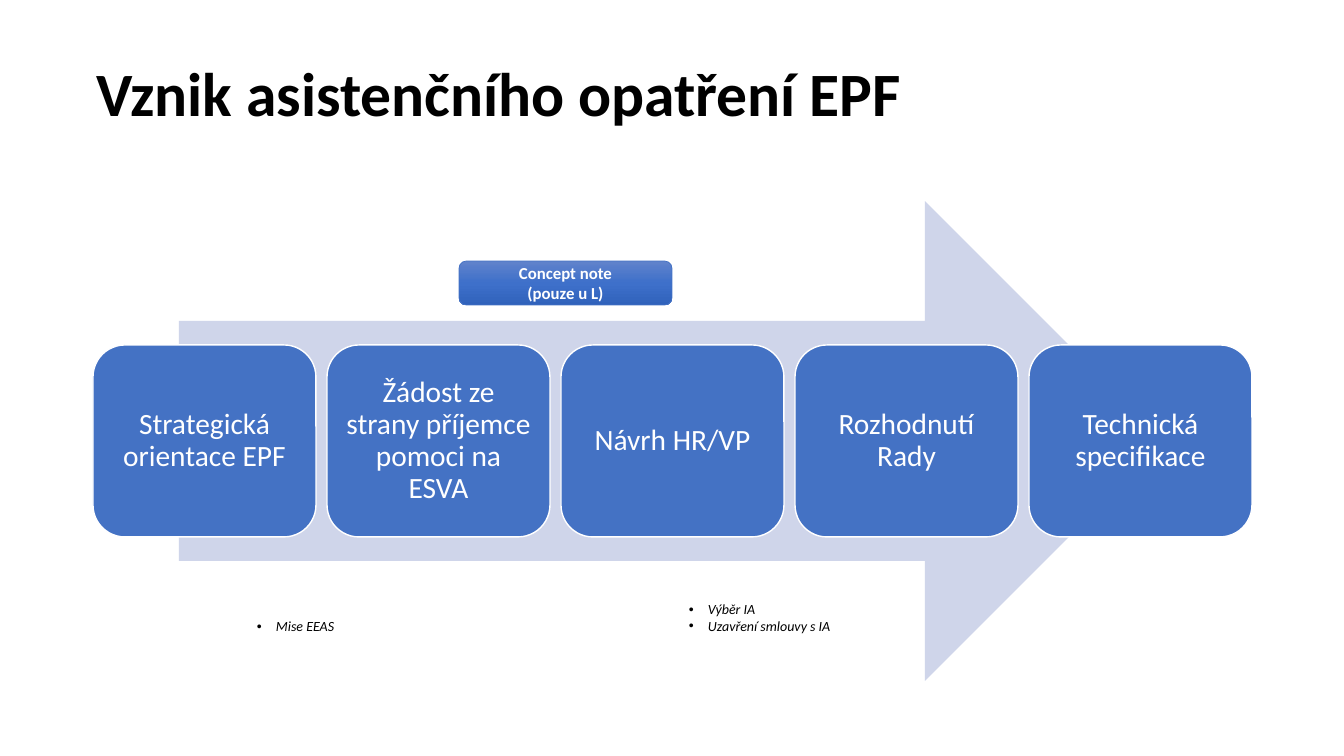
import copy
from dataclasses import dataclass

import pptx
import pptx.dml.color
import pptx.enum.shapes
import pptx.enum.text
import pptx.oxml.ns
import pptx.oxml.xmlchemy
import pptx.util
from lxml import etree

RGBColor = pptx.dml.color.RGBColor
Shape = pptx.enum.shapes.MSO_SHAPE
Align = pptx.enum.text.PP_ALIGN
Anchor = pptx.enum.text.MSO_ANCHOR
AutoSize = pptx.enum.text.MSO_AUTO_SIZE
qn = pptx.oxml.ns.qn

WHITE = RGBColor(0xFF, 0xFF, 0xFF)
BLACK = RGBColor(0x00, 0x00, 0x00)
BLUE = RGBColor(0x44, 0x72, 0xC4)
PALE_BLUE = RGBColor(0xCF, 0xD5, 0xEA)
CONCEPT_GRADIENT = (
    (0.0, RGBColor(0x61, 0x83, 0xCB)),
    (0.5, RGBColor(0x3E, 0x70, 0xCA)),
    (1.0, RGBColor(0x30, 0x62, 0xBB)),
)

FONT = "Calibri"
EMU_PER_PX = 914400 / 100.8
STEP_LEFT, STEP_TOP, STEP_PITCH = 93, 345, 234
STEP_WIDTH, STEP_HEIGHT, STEP_INSET = 223, 192, 9
BULLET_INDENT = 19


@dataclass(frozen=True)
class Area:
    left: int
    top: int
    width: int
    height: int

    def emu(self) -> tuple:
        return px(self.left), px(self.top), px(self.width), px(self.height)


@dataclass(frozen=True)
class Note:
    area: Area
    items: tuple


STEPS = (
    "Strategická orientace EPF",
    "Žádost ze strany příjemce pomoci na ESVA",
    "Návrh HR/VP",
    "Rozhodnutí Rady",
    "Technická specifikace",
)
NOTES = (
    Note(Area(679, 596, 213, 44), ("Výběr IA", "Uzavření smlouvy s IA")),
    Note(Area(247, 613, 213, 27), ("Mise EEAS",)),
)


def px(length: int) -> pptx.util.Emu:
    return pptx.util.Emu(round(length * EMU_PER_PX))


def format_text(frame, size: int, color: RGBColor, align=Align.LEFT,
                bold: bool = False, italic: bool = False) -> None:
    for para in frame.paragraphs:
        para.alignment = align
        for span in para.runs:
            span.font.name = FONT
            span.font.size = pptx.util.Pt(size)
            span.font.color.rgb = color
            span.font.bold = bold
            span.font.italic = italic


def add_box(page, preset, area: Area, fill: RGBColor):
    box = page.shapes.add_shape(preset, *area.emu())
    box.shadow.inherit = False
    box.fill.solid()
    box.fill.fore_color.rgb = fill
    box.line.fill.background()
    return box


def outline(box, color: RGBColor, width: float) -> None:
    box.line.color.rgb = color
    box.line.width = pptx.util.Pt(width)


def fill_gradient(box, stops: tuple) -> None:
    """Fill from top to bottom with any number of stops."""
    box.fill.gradient()
    box.fill.gradient_angle = 270
    stop_list = box._element.spPr.find(qn("a:gradFill")).find(qn("a:gsLst"))
    while len(stop_list) < len(stops):
        stop_list.append(copy.deepcopy(stop_list[0]))
    for stop, (position, color) in zip(box.fill.gradient_stops, stops):
        stop.position = position
        stop.color.rgb = color


def add_title(page) -> None:
    title = page.shapes.title
    title.left, title.top, title.width, title.height = Area(86, 24, 1159, 146).emu()
    frame = title.text_frame
    frame.text = "Vznik asistenčního opatření EPF"
    frame.auto_size = AutoSize.NONE
    frame.vertical_anchor = Anchor.MIDDLE
    frame.paragraphs[0].line_spacing = 0.9
    format_text(frame, 44, BLACK, bold=True)


def add_step(page, index: int, label: str) -> None:
    area = Area(STEP_LEFT + index * STEP_PITCH, STEP_TOP, STEP_WIDTH, STEP_HEIGHT)
    box = add_box(page, Shape.ROUNDED_RECTANGLE, area, BLUE)
    outline(box, WHITE, 1)
    frame = box.text_frame
    frame.margin_left = frame.margin_right = px(STEP_INSET)
    frame.margin_top = frame.margin_bottom = px(STEP_INSET)
    frame.word_wrap = True
    frame.vertical_anchor = Anchor.MIDDLE
    frame.text = label
    frame.paragraphs[0].line_spacing = 0.9
    format_text(frame, 21, WHITE, Align.CENTER)


def add_concept_note(page) -> None:
    box = add_box(page, Shape.ROUNDED_RECTANGLE, Area(459, 261, 213, 44), BLUE)
    fill_gradient(box, CONCEPT_GRADIENT)
    outline(box, BLUE, 0.5)
    frame = box.text_frame
    frame.text = "Concept note\v(pouze u L)"
    frame.vertical_anchor = Anchor.MIDDLE
    format_text(frame, 12, WHITE, Align.CENTER, bold=True)


def add_bullet(para) -> None:
    properties = para._p.get_or_add_pPr()
    properties.set("marL", str(px(BULLET_INDENT)))
    properties.set("indent", str(-px(BULLET_INDENT)))
    etree.SubElement(properties, qn("a:buFont")).set("typeface", "Arial")
    etree.SubElement(properties, qn("a:buChar")).set("char", "•")


def add_note(page, note: Note) -> None:
    frame = page.shapes.add_textbox(*note.area.emu()).text_frame
    frame.word_wrap = True
    frame.auto_size = AutoSize.SHAPE_TO_FIT_TEXT
    frame.text = "\n".join(note.items)
    format_text(frame, 10, BLACK, italic=True)
    for para in frame.paragraphs:
        add_bullet(para)


def main() -> None:
    deck = pptx.Presentation()
    deck.slide_width, deck.slide_height = px(1344), px(756)
    page = deck.slides.add_slide(deck.slide_layouts.get_by_name("Title Only"))
    add_title(page)
    add_box(page, Shape.RIGHT_ARROW, Area(179, 201, 986, 480), PALE_BLUE)
    for index, label in enumerate(STEPS):
        add_step(page, index, label)
    add_concept_note(page)
    for note in NOTES:
        add_note(page, note)
    deck.save("out.pptx")


if __name__ == "__main__":
    main()
